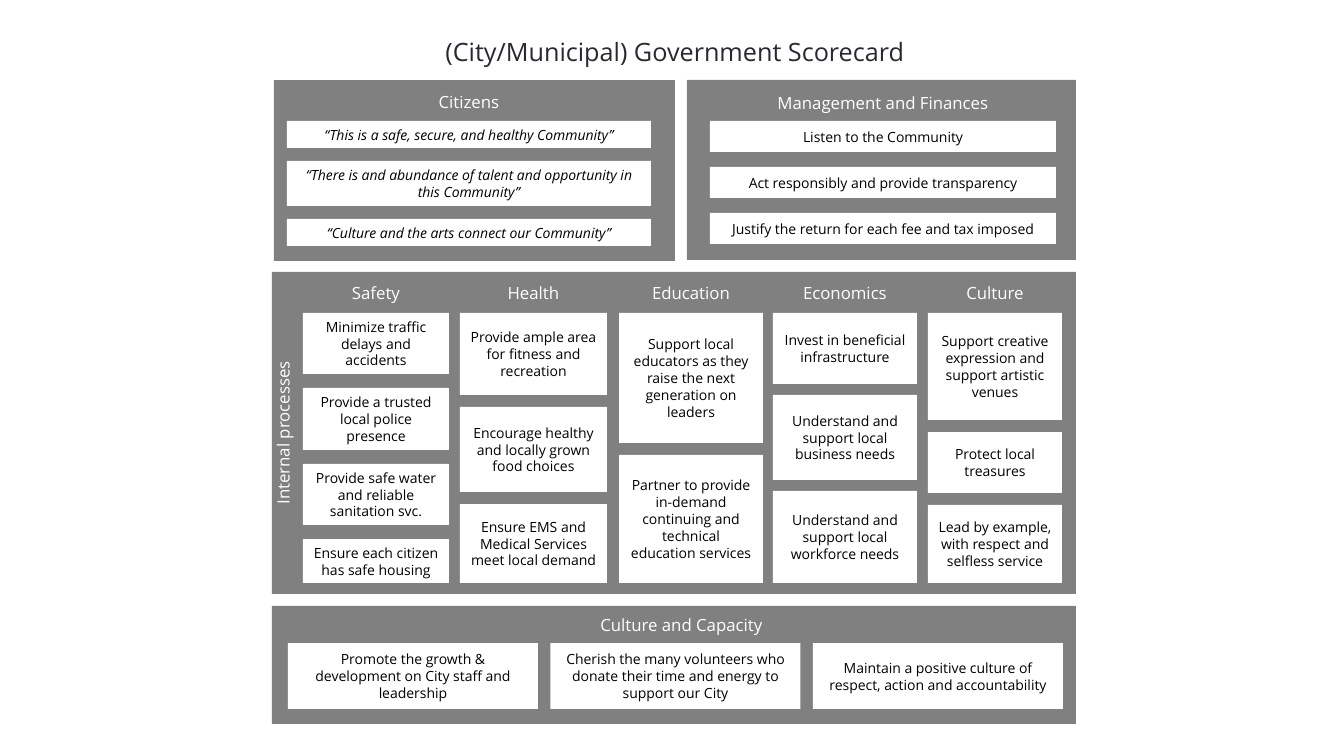
import pptx
import pptx.dml.color
import pptx.enum.shapes
import pptx.enum.text
import pptx.util
from dataclasses import dataclass

TITLE = "(City/Municipal) Government Scorecard"
CITIZENS = [
    ("“This is a safe, secure, and healthy Community”", 27),
    ("“There is and abundance of talent and opportunity in this Community”", 45),
    ("“Culture and the arts connect our Community”", 27),
]
MANAGEMENT = [
    ("Listen to the Community", 31),
    ("Act responsibly and provide transparency", 31),
    ("Justify the return for each fee and tax imposed", 31),
]
# heading, left, width, gap between cards, cards as (text, height)
PROCESSES = [
    ("Safety", 303, 146, 14, [
        ("Minimize traffic delays and accidents", 61),
        ("Provide a trusted local police presence", 62),
        ("Provide safe water and reliable sanitation svc.", 61),
        ("Ensure each citizen has safe housing", 44),
    ]),
    ("Health", 460, 147, 12, [
        ("Provide ample area for fitness and recreation", 82),
        ("Encourage healthy and locally grown food choices", 85),
        ("Ensure EMS and Medical Services meet local demand", 79),
    ]),
    ("Education", 619, 144, 12, [
        ("Support local educators as they raise the next generation on leaders", 130),
        ("Partner to provide in-demand continuing and technical education services", 128),
    ]),
    ("Economics", 773, 144, 11, [
        ("Invest in beneficial infrastructure", 71),
        ("Understand and support local business needs", 85),
        ("Understand and support local workforce needs", 92),
    ]),
    ("Culture", 928, 134, 12, [
        ("Support creative expression and support artistic venues", 107),
        ("Protect local treasures", 61),
        ("Lead by example, with respect and selfless service", 78),
    ]),
]
CAPACITY = [
    "Promote the growth & development on City staff and leadership",
    "Cherish the many volunteers who donate their time and energy to support our City",
    "Maintain a positive culture of respect, action and accountability",
]


@dataclass(frozen=True)
class Theme:
    font: str = "Open Sans"
    panel: str = "808080"
    card: str = "FFFFFF"
    card_text: str = "000000"
    heading_text: str = "FFFFFF"
    title_text: str = "282832"
    title_size: int = 18
    heading_size: int = 12
    card_size: int = 10


THEME = Theme()
EMU_PER_PX = 914400 / 100.8
HEADING_HEIGHT = 30


def px(length):
    return pptx.util.Emu(round(length * EMU_PER_PX))


def rgb(code):
    return pptx.dml.color.RGBColor.from_string(code)


def write(shape, text, size, color, italic=False):
    frame = shape.text_frame
    frame.word_wrap = True
    frame.vertical_anchor = pptx.enum.text.MSO_ANCHOR.MIDDLE
    paragraph = frame.paragraphs[0]
    paragraph.text = text
    paragraph.alignment = pptx.enum.text.PP_ALIGN.CENTER
    paragraph.font.name = THEME.font
    paragraph.font.size = pptx.util.Pt(size)
    paragraph.font.italic = italic
    paragraph.font.color.rgb = rgb(color)


def add_rectangle(slide, left, top, width, height, fill):
    shape = slide.shapes.add_shape(
        pptx.enum.shapes.MSO_SHAPE.RECTANGLE, px(left), px(top), px(width), px(height))
    shape.shadow.inherit = False
    shape.fill.solid()
    shape.fill.fore_color.rgb = rgb(fill)
    shape.line.fill.background()
    return shape


def add_card(slide, text, left, top, width, height, italic=False):
    card = add_rectangle(slide, left, top, width, height, THEME.card)
    write(card, text, THEME.card_size, THEME.card_text, italic)


def add_card_stack(slide, cards, left, top, width, gap, italic=False):
    for text, height in cards:
        add_card(slide, text, left, top, width, height, italic)
        top += height + gap


def add_label(slide, text, left, top, width, height=HEADING_HEIGHT,
              size=THEME.heading_size, color=THEME.heading_text):
    label = slide.shapes.add_textbox(px(left), px(top), px(width), px(height))
    write(label, text, size, color)
    return label


def add_top_panels(slide):
    add_rectangle(slide, 274, 80, 401, 181, THEME.panel)
    add_label(slide, "Citizens", 287, 87, 364)
    add_card_stack(slide, CITIZENS, 287, 121, 364, 13, italic=True)
    add_rectangle(slide, 687, 80, 389, 180, THEME.panel)
    add_label(slide, "Management and Finances", 710, 88, 346)
    add_card_stack(slide, MANAGEMENT, 710, 121, 346, 15)


def add_processes(slide):
    add_rectangle(slide, 272, 272, 804, 322, THEME.panel)
    side_label = add_label(slide, "Internal processes", 263, 272, 40, 322)
    side_label.text_frame._txBody.bodyPr.set("vert", "vert270")
    for heading, left, width, gap, cards in PROCESSES:
        add_label(slide, heading, left, 278, width)
        add_card_stack(slide, cards, left, 313, width, gap)


def add_capacity(slide):
    left, right, card_width = 288, 1063, 250
    step = (right - left - card_width) / (len(CAPACITY) - 1)
    add_rectangle(slide, 272, 606, 804, 118, THEME.panel)
    add_label(slide, "Culture and Capacity", 287, 610, 789)
    for index, text in enumerate(CAPACITY):
        add_card(slide, text, left + index * step, 643, card_width, 66)


def main():
    presentation = pptx.Presentation()
    presentation.slide_width, presentation.slide_height = px(1344), px(756)
    slide = presentation.slides.add_slide(presentation.slide_layouts[6])
    add_label(slide, TITLE, 274, 31, 802, 40, THEME.title_size, THEME.title_text)
    add_top_panels(slide)
    add_processes(slide)
    add_capacity(slide)
    presentation.save("out.pptx")


if __name__ == "__main__":
    main()
